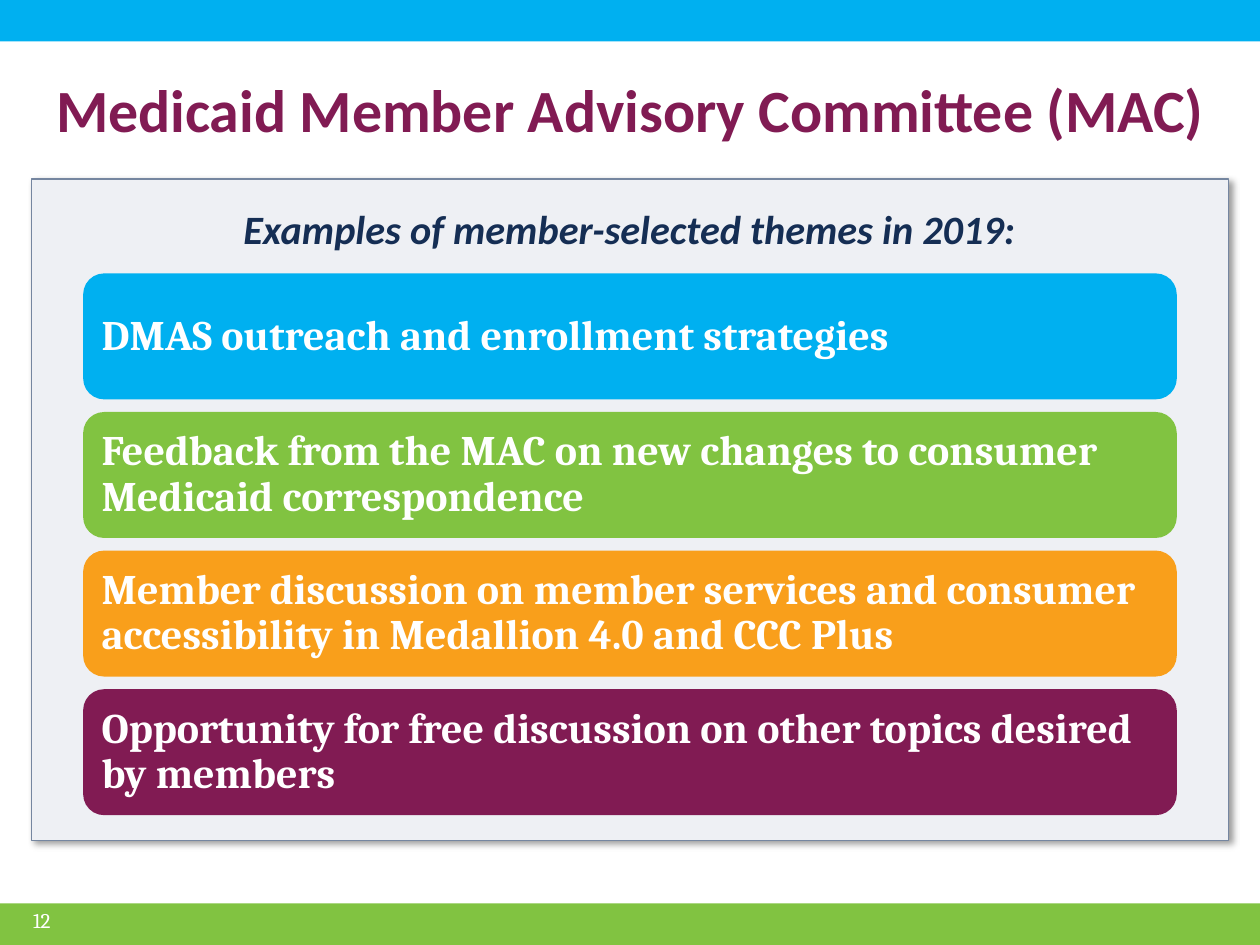
"""Build the Medicaid Member Advisory Committee themes slide."""
from lxml import etree
from pptx import Presentation
from pptx.dml.color import RGBColor
from pptx.enum.shapes import MSO_SHAPE
from pptx.enum.text import MSO_ANCHOR, PP_ALIGN
from pptx.oxml import parse_xml
from pptx.oxml.ns import nsdecls
from pptx.util import Inches, Pt

RECT, ROUND = MSO_SHAPE.RECTANGLE, MSO_SHAPE.ROUNDED_RECTANGLE
TOP, MIDDLE = MSO_ANCHOR.TOP, MSO_ANCHOR.MIDDLE
LEFT, CENTER, RIGHT = PP_ALIGN.LEFT, PP_ALIGN.CENTER, PP_ALIGN.RIGHT
BLUE = RGBColor(0x00, 0xB0, 0xF0)
GREEN = RGBColor(0x81, 0xC3, 0x41)
ORANGE = RGBColor(0xF9, 0x9F, 0x1B)
PLUM = RGBColor(0x81, 0x1B, 0x53)
NAVY = RGBColor(0x15, 0x2E, 0x54)
PALE = RGBColor(0xEE, 0xF0, 0xF4)
SLATE = RGBColor(0x75, 0x86, 0xA0)
WHITE = RGBColor(0xFF, 0xFF, 0xFF)


def write(shape, text, size, color, face="Cambria", bold=True, italic=False,
          align=LEFT, anchor=MIDDLE, spacing=1.0):
    frame = shape.text_frame
    frame.word_wrap = True
    frame.vertical_anchor = anchor
    frame.text = text
    para = frame.paragraphs[0]
    para.alignment = align
    para.line_spacing = spacing
    font = para.runs[0].font
    font.name, font.size, font.color.rgb = face, Pt(size), color
    font.bold, font.italic = bold, italic


def block(kind, left, top, width, height, fill):
    shape = slide.shapes.add_shape(
        kind, Inches(left), Inches(top), Inches(width), Inches(height))
    shape.shadow.inherit = False
    shape.fill.solid()
    shape.fill.fore_color.rgb = fill
    shape.line.fill.background()
    return shape


prs = Presentation()
prs.slide_width, prs.slide_height = Inches(10), Inches(7.5)
slide = prs.slides.add_slide(prs.slide_layouts[5])

block(RECT, 0, 0, 10, 0.33, BLUE)
block(RECT, 0, 7.17, 10, 0.33, GREEN)

title = slide.shapes.title
title.left, title.top = Inches(0), Inches(0.47)
title.width, title.height = Inches(10), Inches(0.78)
write(title, "Medicaid Member Advisory Committee (MAC)", 34.2, PLUM,
      face="Calibri", align=CENTER)

number = slide.shapes.add_textbox(
    Inches(0.08), Inches(7.1), Inches(0.42), Inches(0.4))
write(number, "12", 12, WHITE, bold=False, align=RIGHT)

panel = block(RECT, 0.25, 1.42, 9.5, 5.25, PALE)
panel.line.color.rgb = SLATE
panel.line.width = Pt(0.75)
panel.text_frame.margin_top = Inches(0.2)
write(panel, "Examples of member-selected themes in 2019:", 23, NAVY,
      face="Calibri", italic=True, align=CENTER, anchor=TOP)
shade = parse_xml(
    f'<a:outerShdw {nsdecls("a")} blurRad="{Pt(4)}" dist="{Pt(3)}" '
    'dir="2700000" algn="tl" rotWithShape="0"/>')
black = etree.SubElement(shade, "{*}srgbClr".replace("*", shade.nsmap["a"]), val="000000")
etree.SubElement(black, "{*}alpha".replace("*", shade.nsmap["a"]), val="40000")
panel.element.spPr.find("{*}effectLst").append(shade)

themes = [
    ("DMAS outreach and enrollment strategies", BLUE),
    ("Feedback from the MAC on new changes to consumer Medicaid correspondence", GREEN),
    ("Member discussion on member services and consumer accessibility "
     "in Medallion 4.0 and CCC Plus", ORANGE),
    ("Opportunity for free discussion on other topics desired by members", PLUM),
]
for row, (text, fill) in enumerate(themes):
    bar = block(ROUND, 0.66, 2.17 + 1.1 * row, 8.68, 1, fill)
    write(bar, text, 24, WHITE, spacing=0.9)

prs.save("out.pptx")
